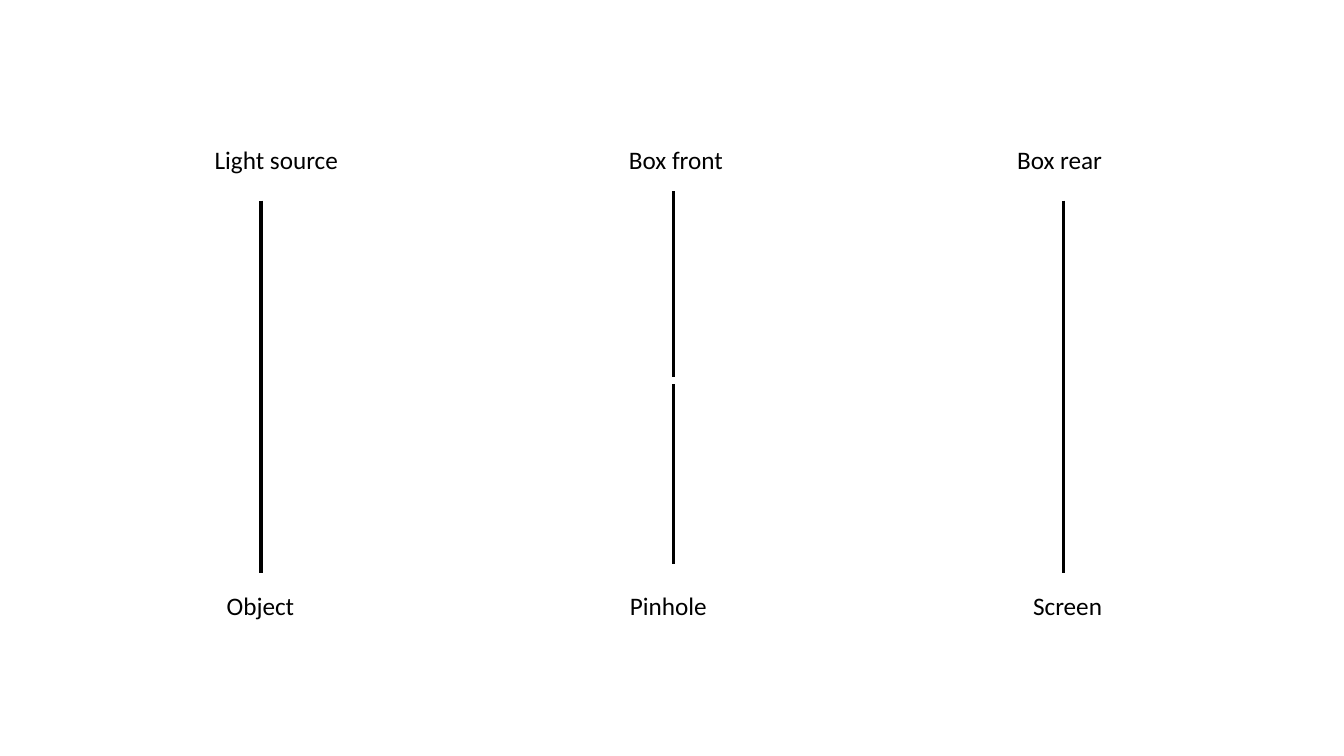
"""Build a pinhole camera diagram slide with three labelled planes."""
from lxml.etree import SubElement
from pptx import Presentation
from pptx.dml.color import RGBColor
from pptx.enum.shapes import MSO_CONNECTOR, MSO_SHAPE
from pptx.enum.text import MSO_AUTO_SIZE
from pptx.oxml.ns import qn
from pptx.util import Inches, Pt

COLORS = {"ink": "000000", "paper": "FFFFFF"}


class Diagram:
    """Draw on one slide, with lengths given as percentages of its size."""

    def __init__(self, deck):
        self.width, self.height = deck.slide_width, deck.slide_height
        self.slide = deck.slides.add_slide(deck.slide_layouts[6])
        self.font, self.size = "Calibri", Pt(18)

    def x(self, share):
        return round(self.width * share / 100)

    def y(self, share):
        return round(self.height * share / 100)

    def color(self, name):
        return RGBColor.from_string(COLORS[name])

    def plane(self, across, top, length):
        plane = self.slide.shapes.add_connector(
            MSO_CONNECTOR.STRAIGHT,
            self.x(across), self.y(top), self.x(across), self.y(top + length))
        plane.line.color.rgb = self.color("ink")
        plane.line.width = Pt(2.5)
        SubElement(plane._element.spPr, qn("a:effectLst"))

    def gap(self, left, top, width, height):
        gap = self.slide.shapes.add_shape(
            MSO_SHAPE.RECTANGLE,
            self.x(left), self.y(top), self.x(width), self.y(height))
        gap.shadow.inherit = False
        gap.fill.solid()
        gap.fill.fore_color.rgb = self.color("paper")
        gap.line.color.rgb = self.color("paper")
        gap.line.width = Pt(1)

    def label_row(self, left, top, width, labels, stops):
        row = self.slide.shapes.add_textbox(
            self.x(left), self.y(top), self.x(width), self.y(5.33))
        row.text_frame.word_wrap = True
        row.text_frame.auto_size = MSO_AUTO_SIZE.SHAPE_TO_FIT_TEXT
        line = row.text_frame.paragraphs[0]
        tabs = SubElement(line._p.get_or_add_pPr(), qn("a:tabLst"))
        for stop in stops:
            SubElement(tabs, qn("a:tab"), pos=str(self.x(stop)), algn="l")
        for index, label in enumerate(labels):
            run = line.add_run()
            run.text = f"\t{label}" if index else label
            run.font.name, run.font.size = self.font, self.size
            run.font.color.rgb = self.color("ink")


def main():
    deck = Presentation()
    deck.slide_width, deck.slide_height = Inches(13.33), Inches(7.5)
    diagram = Diagram(deck)
    for across, top in ((19.43, 26.53), (50.11, 25.33), (79.14, 26.53)):
        diagram.plane(across, top, 49.33)
    diagram.label_row(16.13, 77.47, 69.69, ("Object", "Pinhole", "Screen"), (30, 60))
    diagram.gap(48.61, 50, 3.3, 0.67)
    diagram.label_row(15.23, 18.4, 72.09,
                      ("Light source", "Box front", "Box rear"), (30.83, 59.71))
    deck.save("out.pptx")


if __name__ == "__main__":
    main()
